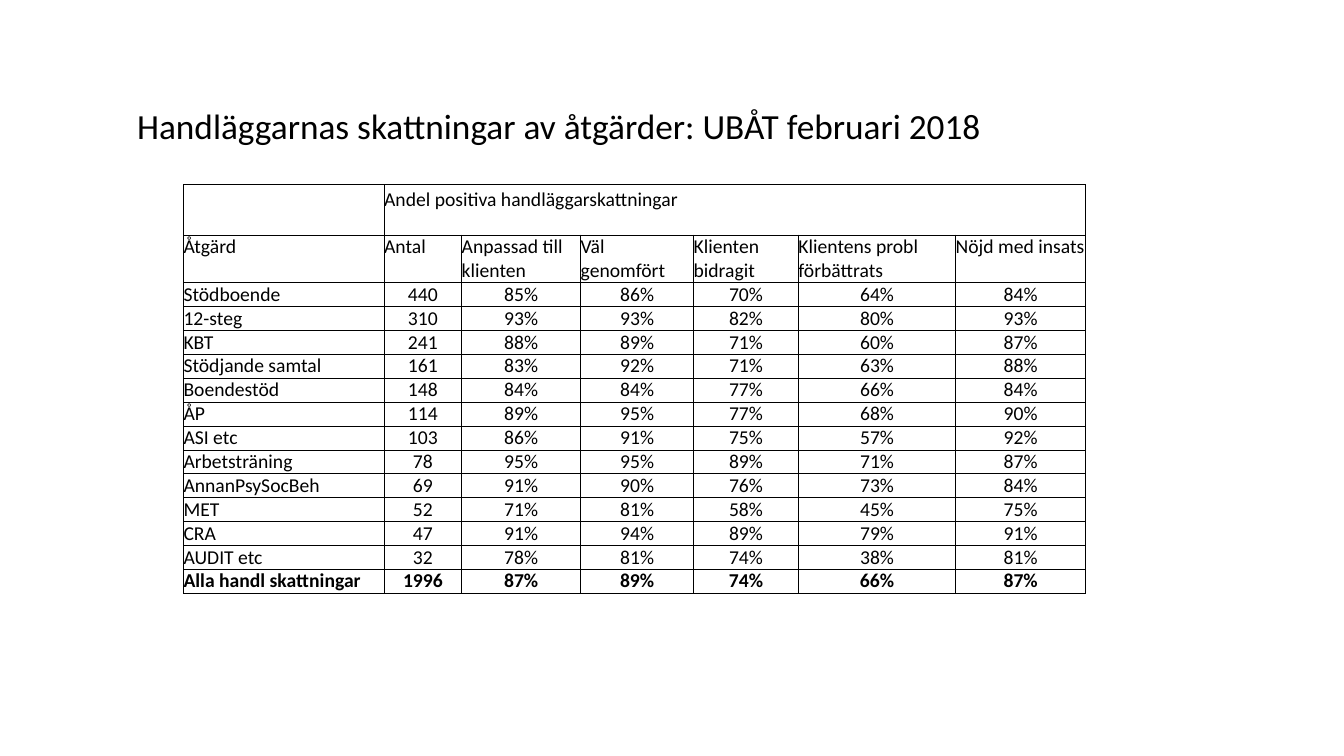
from dataclasses import dataclass

import pptx
import pptx.dml.color
import pptx.enum.text
import pptx.oxml
import pptx.oxml.ns
import pptx.presentation
import pptx.slide
import pptx.table
import pptx.text.text
import pptx.util
from pptx.util import Inches

COLORS = {"text": "000000", "border": "000000"}
FONT = "Calibri"
BODY_SIZE = 14
BORDER_WIDTH = 0.5
TITLE = "Handläggarnas skattningar av åtgärder: UBÅT februari 2018"
GROUP_HEADING = "Andel positiva handläggarskattningar"
LINE_HEIGHT = 0.23
GROUP_ROW_HEIGHT = 0.5
HEADING_ROW_HEIGHT = 0.47


@dataclass(frozen=True)
class Column:
    heading: str
    width: float


@dataclass(frozen=True)
class Measure:
    name: str
    count: int
    percents: tuple[int, ...]
    bold: bool = False

    def texts(self) -> list[str]:
        return [self.name, str(self.count), *(f"{percent}%" for percent in self.percents)]


COLUMNS = [
    Column("Åtgärd", 1.99),
    Column("Antal", 0.77),
    Column("Anpassad till klienten", 1.18),
    Column("Väl genomfört", 1.12),
    Column("Klienten bidragit", 1.04),
    Column("Klientens probl förbättrats", 1.56),
    Column("Nöjd med insats", 1.29),
]

MEASURES = [
    Measure("Stödboende", 440, (85, 86, 70, 64, 84)),
    Measure("12-steg", 310, (93, 93, 82, 80, 93)),
    Measure("KBT", 241, (88, 89, 71, 60, 87)),
    Measure("Stödjande samtal", 161, (83, 92, 71, 63, 88)),
    Measure("Boendestöd", 148, (84, 84, 77, 66, 84)),
    Measure("ÅP", 114, (89, 95, 77, 68, 90)),
    Measure("ASI etc", 103, (86, 91, 75, 57, 92)),
    Measure("Arbetsträning", 78, (95, 95, 89, 71, 87)),
    Measure("AnnanPsySocBeh", 69, (91, 90, 76, 73, 84)),
    Measure("MET", 52, (71, 81, 58, 45, 75)),
    Measure("CRA", 47, (91, 94, 89, 79, 91)),
    Measure("AUDIT etc", 32, (78, 81, 74, 38, 81)),
    Measure("Alla handl skattningar", 1996, (87, 89, 74, 66, 87), bold=True),
]


def format_paragraph(
    paragraph: pptx.text.text._Paragraph,
    size: float,
    align: pptx.enum.text.PP_ALIGN,
    bold: bool = False,
) -> None:
    paragraph.alignment = align
    paragraph.font.name = FONT
    paragraph.font.size = pptx.util.Pt(size)
    paragraph.font.bold = bold
    paragraph.font.color.rgb = pptx.dml.color.RGBColor.from_string(COLORS["text"])


def outline_cell(cell: pptx.table._Cell) -> None:
    """Give the cell a thin border on every side and no fill."""
    properties = cell._tc.get_or_add_tcPr()
    width = pptx.util.Pt(BORDER_WIDTH)
    for side in ("lnL", "lnR", "lnT", "lnB"):
        properties.append(pptx.oxml.parse_xml(
            f'<a:{side} {pptx.oxml.ns.nsdecls("a")} w="{width}"><a:solidFill>'
            f'<a:srgbClr val="{COLORS["border"]}"/></a:solidFill></a:{side}>'
        ))
    cell.fill.background()


def write_cell(
    cell: pptx.table._Cell,
    text: str,
    align: pptx.enum.text.PP_ALIGN = pptx.enum.text.PP_ALIGN.LEFT,
    anchor: pptx.enum.text.MSO_ANCHOR = pptx.enum.text.MSO_ANCHOR.BOTTOM,
    bold: bool = False,
) -> None:
    cell.text = text
    cell.vertical_anchor = anchor
    cell.margin_left = cell.margin_right = Inches(0)
    cell.margin_top = cell.margin_bottom = Inches(0)
    format_paragraph(cell.text_frame.paragraphs[0], BODY_SIZE, align, bold)


def add_title(slide: pptx.slide.Slide) -> None:
    title = slide.shapes.title
    title.left, title.top = Inches(1.26), Inches(0.82)
    title.width, title.height = Inches(9.15), Inches(0.91)
    frame = title.text_frame
    frame.text = TITLE
    frame.word_wrap = True
    frame.auto_size = pptx.enum.text.MSO_AUTO_SIZE.NONE
    frame.vertical_anchor = pptx.enum.text.MSO_ANCHOR.MIDDLE
    format_paragraph(frame.paragraphs[0], 25.2, pptx.enum.text.PP_ALIGN.LEFT)
    frame.paragraphs[0].line_spacing = 0.9


def add_ratings_table(slide: pptx.slide.Slide) -> None:
    heights = [GROUP_ROW_HEIGHT, HEADING_ROW_HEIGHT] + [LINE_HEIGHT] * len(MEASURES)
    table = slide.shapes.add_table(
        len(heights), len(COLUMNS), Inches(1.82), Inches(1.83),
        Inches(sum(column.width for column in COLUMNS)), Inches(sum(heights)),
    ).table
    table.first_row = table.horz_banding = False
    for row, height in zip(table.rows, heights):
        row.height = Inches(height)
    for cell in table.iter_cells():
        outline_cell(cell)

    group_cell = table.cell(0, 1)
    group_cell.merge(table.cell(0, len(COLUMNS) - 1))
    write_cell(group_cell, GROUP_HEADING)
    group_cell.margin_bottom = Inches(LINE_HEIGHT)

    for index, column in enumerate(COLUMNS):
        table.columns[index].width = Inches(column.width)
        write_cell(table.cell(1, index), column.heading,
                   anchor=pptx.enum.text.MSO_ANCHOR.TOP)

    for row_index, measure in enumerate(MEASURES, start=2):
        for index, text in enumerate(measure.texts()):
            align = pptx.enum.text.PP_ALIGN.CENTER if index else pptx.enum.text.PP_ALIGN.LEFT
            write_cell(table.cell(row_index, index), text, align, bold=measure.bold)


def main() -> None:
    presentation = pptx.Presentation()
    presentation.slide_width = Inches(13.33)
    presentation.slide_height = Inches(7.5)
    title_only = presentation.slide_layouts.get_by_name("Title Only")
    slide = presentation.slides.add_slide(title_only)
    add_title(slide)
    add_ratings_table(slide)
    presentation.save("out.pptx")


if __name__ == "__main__":
    main()
